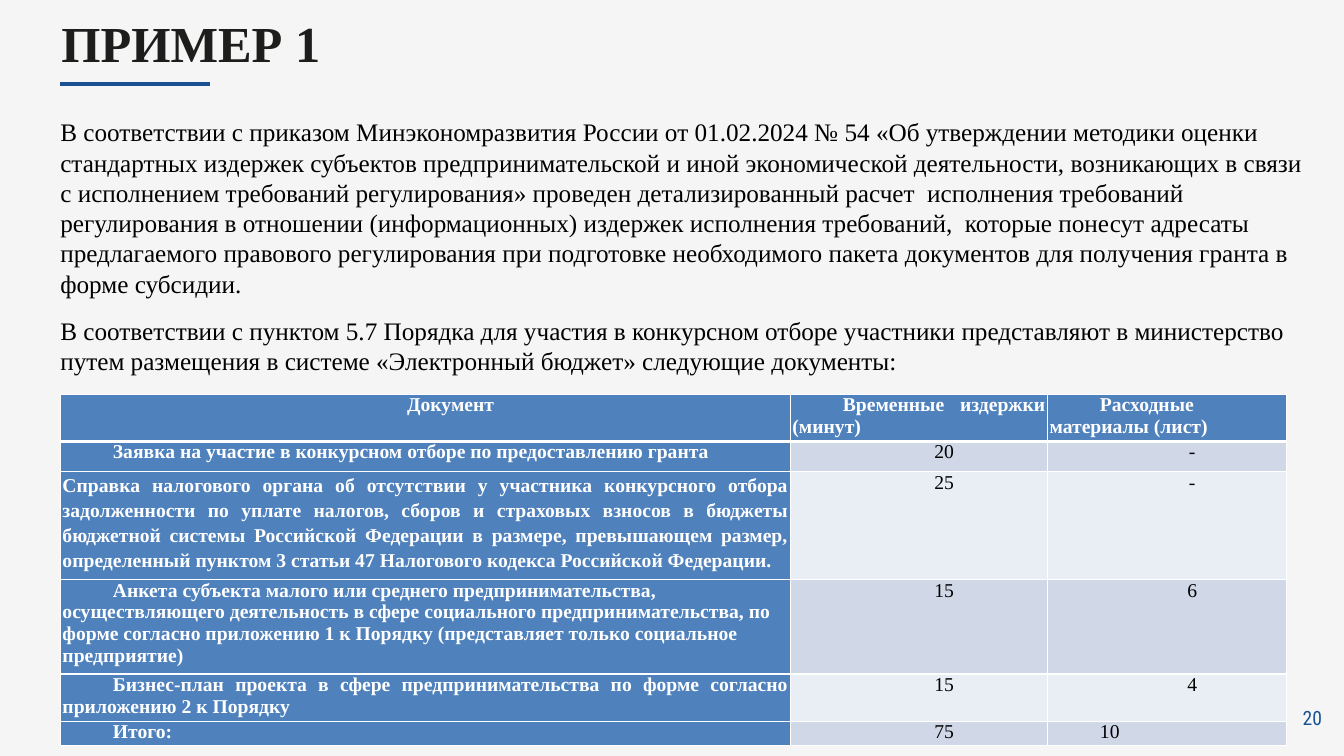
import pptx
import pptx.dml.color
import pptx.enum.text
import pptx.oxml
import pptx.oxml.ns
import pptx.util
from dataclasses import dataclass
from lxml import etree

Inches = pptx.util.Inches
Pt = pptx.util.Pt
Align = pptx.enum.text.PP_ALIGN


@dataclass(frozen=True)
class Theme:
    font: str = "Times New Roman"
    number_font: str = "Roboto Condensed"
    background: str = "F5F5F5"
    title: str = "1D1D1B"
    accent: str = "185292"
    text: str = "000000"
    white: str = "FFFFFF"
    header: str = "4F81BD"
    bands: tuple = ("D0D8E8", "E9EDF4")
    title_size: int = 36
    body_size: int = 18
    small_size: int = 14


class SlideBuilder:
    def __init__(self, prs, theme):
        self.theme = theme
        self.s = prs.slides.add_slide(prs.slide_layouts[6])
        fill = self.s.background.fill
        fill.solid()
        fill.fore_color.rgb = self.rgb(theme.background)

    def rgb(self, color):
        return pptx.dml.color.RGBColor.from_string(color)

    def style(self, p, size, color, bold=False, font=None, align=Align.LEFT):
        p.alignment = align
        p.font.name = font or self.theme.font
        p.font.size = Pt(size)
        p.font.bold = bold
        p.font.color.rgb = self.rgb(color)

    def text(self, box, paragraphs, size, color, margins=(0, 0), gap=0, **style):
        tf = self.s.shapes.add_textbox(*map(Inches, box)).text_frame
        tf.word_wrap = True
        tf.margin_left = tf.margin_right = Inches(margins[0])
        tf.margin_top = tf.margin_bottom = Inches(margins[1])
        for i, content in enumerate(paragraphs):
            p = tf.add_paragraph() if i else tf.paragraphs[0]
            p.text = content
            p.space_before = Pt(gap if i else 0)
            self.style(p, size, color, **style)

    def line(self, start, end, color, width):
        sp = self.s.shapes.add_connector(1, *map(Inches, start + end))
        sp.line.color.rgb = self.rgb(color)
        sp.line.width = Pt(width)
        etree.SubElement(sp._element.spPr, pptx.oxml.ns.qn("a:effectLst"))

    def borders(self, cell, bottom):
        tcPr = cell._tc.get_or_add_tcPr()
        for side, width in zip("LRTB", (1, 1, 1, bottom)):
            tcPr.append(pptx.oxml.parse_xml(
                f'<a:ln{side} {pptx.oxml.ns.nsdecls("a")} w="{Pt(width)}">'
                f'<a:solidFill><a:srgbClr val="{self.theme.white}"/></a:solidFill>'
                f'</a:ln{side}>'))

    def cell(self, cell, content, align, fill, strong, indent, spacing, bottom):
        self.borders(cell, bottom)
        cell.fill.solid()
        cell.fill.fore_color.rgb = self.rgb(fill)
        cell.margin_left = cell.margin_right = Inches(0.02)
        cell.margin_top = cell.margin_bottom = 0
        p = cell.text_frame.paragraphs[0]
        p.text = content
        p.line_spacing = spacing
        p._p.get_or_add_pPr().set("indent", str(Inches(indent)))
        color = self.theme.white if strong else self.theme.text
        self.style(p, self.theme.small_size, color, bold=strong, align=align)

    def table(self, box, widths, heights, rows, aligns, flush_row):
        t = self.theme
        table = self.s.shapes.add_table(len(rows), len(widths), *map(Inches, box)).table
        for column, width in zip(table.columns, widths):
            column.width = Inches(width)
        for r, (row, height) in enumerate(zip(rows, heights)):
            table.rows[r].height = Inches(height)
            for c, content in enumerate(row):
                strong = r == 0 or c == 0
                flush = (r, c) == (flush_row, 0)
                self.cell(table.cell(r, c), content, aligns[r][c],
                          t.header if strong else t.bands[(r - 1) % 2], strong,
                          0 if flush else 0.5, 1.15 if flush else 1.0,
                          1 if r else 3)


BODY = [
    "В соответствии с приказом Минэкономразвития России от 01.02.2024 № 54 «Об утверждении методики оценки стандартных издержек субъектов предпринимательской и иной экономической деятельности, возникающих в связи с исполнением требований регулирования» проведен детализированный расчет  исполнения требований регулирования в отношении (информационных) издержек исполнения требований,  которые понесут адресаты предлагаемого правового регулирования при подготовке необходимого пакета документов для получения гранта в форме субсидии.",
    "В соответствии с пунктом 5.7 Порядка для участия в конкурсном отборе участники представляют в министерство путем размещения в системе «Электронный бюджет» следующие документы:",
]
ROWS = [
    ("Документ", "Временные издержки (минут)", "Расходные материалы (лист)"),
    ("Заявка на участие в конкурсном отборе по предоставлению гранта", "20", "-"),
    ("Справка налогового органа об отсутствии у участника конкурсного отбора задолженности по уплате налогов, сборов и страховых взносов в бюджеты бюджетной системы Российской Федерации в размере, превышающем размер, определенный пунктом 3 статьи 47 Налогового кодекса Российской Федерации.", "25", "-"),
    ("Анкета субъекта малого или среднего предпринимательства, осуществляющего деятельность в сфере социального предпринимательства, по форме согласно приложению 1 к Порядку (представляет только социальное предприятие)", "15", "6"),
    ("Бизнес-план проекта в сфере предпринимательства по форме согласно приложению 2 к Порядку", "15", "4"),
    ("Итого:", "75", "10"),
]
JUSTIFIED = (Align.JUSTIFY, Align.CENTER, Align.CENTER)
ALIGNS = [
    (Align.CENTER, Align.JUSTIFY, Align.LEFT),
    JUSTIFIED,
    JUSTIFIED,
    (Align.LEFT, Align.CENTER, Align.CENTER),
    JUSTIFIED,
    (Align.LEFT, Align.CENTER, Align.LEFT),
]


def main():
    prs = pptx.Presentation()
    prs.slide_width, prs.slide_height = Inches(13.33), Inches(7.5)
    theme = Theme()
    slide = SlideBuilder(prs, theme)
    slide.text((0.61, 0.12, 3.57, 0.6), ["ПРИМЕР 1"], theme.title_size, theme.title, bold=True)
    slide.line((0.6, 0.83), (2.08, 0.83), theme.accent, 3)
    slide.text((12.92, 7, 0.37, 0.22), ["20"], theme.small_size, theme.accent,
               font=theme.number_font)
    slide.text((0.5, 1.11, 12.67, 2.7), BODY, theme.body_size, theme.text,
               margins=(0.1, 0.05), gap=12)
    slide.table((0.6, 3.91, 12.16, 3.48), (7.24, 2.55, 2.37),
                (0.47, 0.3, 1.07, 0.93, 0.47, 0.24), ROWS, ALIGNS, flush_row=2)
    prs.save("out.pptx")


if __name__ == "__main__":
    main()
